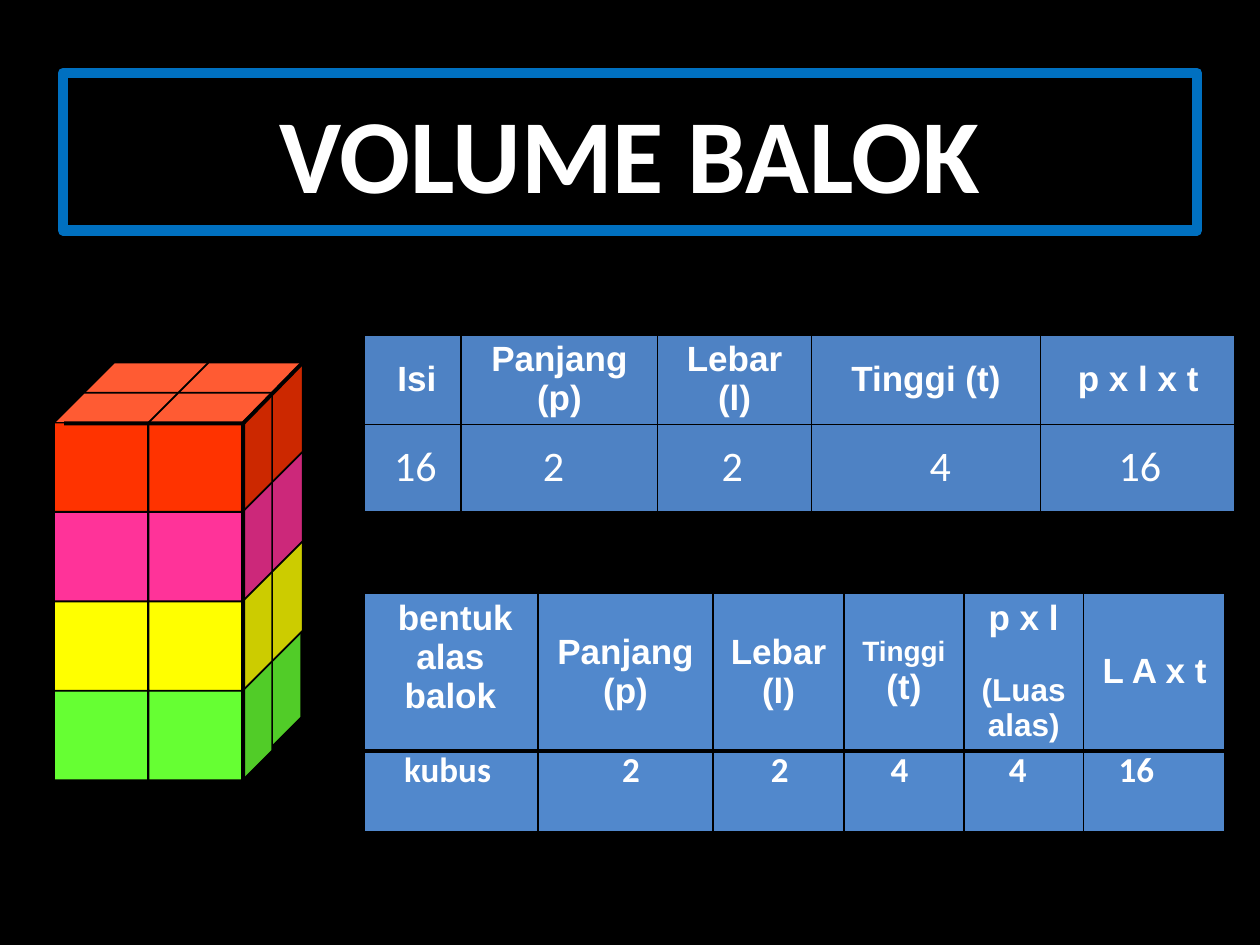
import pptx
import pptx.util
import pptx.dml.color
import pptx.enum.shapes
import pptx.enum.text
import pptx.oxml
import pptx.oxml.ns

Inches = pptx.util.Inches
Pt = pptx.util.Pt
SHAPE = pptx.enum.shapes.MSO_SHAPE
ALIGN = pptx.enum.text.PP_ALIGN
ANCHOR = pptx.enum.text.MSO_ANCHOR

COLOURS = {
    "black": "000000", "white": "FFFFFF", "frame": "0070C0", "cell": "558ED5",
    "green": "66FF33", "yellow": "FFFF00", "pink": "FF3399", "red": "FF3300",
}
LAYERS = ["green", "yellow", "pink", "red"]  # bottom to top
CUBE_WIDTH, CUBE_HEIGHT = 0.98, 0.94
COLUMN_STEP, LAYER_STEP, DEPTH = 0.75, 0.71, 0.24


def rgb(name):
    return pptx.dml.color.RGBColor.from_string(COLOURS[name])


def drawing_xml(body):
    tag, rest = body.split(" ", 1)
    return pptx.oxml.parse_xml(f"<{tag} {pptx.oxml.ns.nsdecls('a')} {rest}")


def write(para, text, size=20, font="Arial", bold=True, align=ALIGN.CENTER, before=0):
    span = para.add_run()
    span.text = text
    span.font.size = Pt(size)
    span.font.name = font
    span.font.bold = bold
    span.font.color.rgb = rgb("white")
    para.alignment = align
    para.space_before = Pt(before)


def add_label(page, text, left, top, width, height, **style):
    box = page.shapes.add_textbox(Inches(left), Inches(top), Inches(width), Inches(height))
    box.text_frame.word_wrap = True
    write(box.text_frame.paragraphs[0], text, font="Calibri", align=ALIGN.LEFT, **style)


def style_line(shape, colour, width):
    shape.line.color.rgb = rgb(colour)
    shape.line.width = Pt(width)


def add_cube(page, left, top, width, height, fill=None, line=0.75):
    cube = page.shapes.add_shape(
        SHAPE.CUBE, Inches(left), Inches(top), Inches(width), Inches(height))
    cube.shadow.inherit = False
    if fill:
        cube.fill.solid()
        cube.fill.fore_color.rgb = rgb(fill)
    else:
        cube.fill.background()
    style_line(cube, "black", line)


def add_stack(page):
    for level, colour in enumerate(LAYERS):
        for is_front in (False, True):
            shift = 0 if is_front else DEPTH
            for column in range(2):
                add_cube(page, 0.43 + shift + column * COLUMN_STEP,
                         5.25 - shift - level * LAYER_STEP,
                         CUBE_WIDTH, CUBE_HEIGHT, fill=colour)
            if level == 0 and not is_front:
                add_cube(page, 0.43, 2.88, 1.97, 3.31, line=2.25)

    # Thick edges of the front corner
    builder = page.shapes.build_freeform(Inches(2.4), Inches(2.88), scale=1.0)
    corner = [(1.93, 3.36), (1.93, 6.19), (1.93, 3.36), (0.51, 3.36)]
    builder.add_line_segments([(Inches(x), Inches(y)) for x, y in corner], close=False)
    edges = builder.convert_to_shape()
    edges.shadow.inherit = False
    edges.fill.background()
    style_line(edges, "black", 2.25)


def style_cell(cell, opacity, widths):
    cell.fill.solid()
    cell.fill.fore_color.rgb = rgb("cell")
    properties = cell._tc.get_or_add_tcPr()
    colour = properties.find(".//" + pptx.oxml.ns.qn("a:srgbClr"))
    colour.append(drawing_xml(f'a:alpha val="{opacity * 1000}"/>'))
    for place, (side, width) in enumerate(widths.items()):
        properties.insert(place, drawing_xml(
            f'a:ln{side} w="{Pt(width)}"><a:solidFill><a:srgbClr val="{COLOURS["black"]}"/>'
            f'</a:solidFill></a:ln{side}>'))


def add_grid(page, left, top, columns, rows, headers, opacity, divider):
    """Each header is a list of paragraphs, each a list of (text, format) spans."""
    frame = page.shapes.add_table(len(rows), len(columns), Inches(left), Inches(top),
                                  Inches(sum(columns)), Inches(sum(rows)))
    table = frame.table
    for column, width in zip(table.columns, columns):
        column.width = Inches(width)
    for row, height in zip(table.rows, rows):
        row.height = Inches(height)
    last = len(columns) - 1
    for r in range(len(rows)):
        for c in range(len(columns)):
            style_cell(table.cell(r, c), opacity, {
                "L": 2.25 if c == 0 else 1,
                "R": 2.25 if c == last else 1,
                "T": 2.25 if r == 0 else divider,
                "B": divider if r == 0 else 2.25,
            })
    for c, (anchor, paragraphs) in enumerate(headers):
        cell = table.cell(0, c)
        cell.vertical_anchor = anchor
        for number, spans in enumerate(paragraphs):
            text = cell.text_frame
            para = text.add_paragraph() if number else text.paragraphs[0]
            for words, style in spans:
                write(para, words, **style)


def plain(text, anchor=ANCHOR.MIDDLE):
    return anchor, [[(text, {})]]


def add_title(page, text):
    title = page.shapes.title
    title.left, title.top = Inches(0.5), Inches(0.58)
    title.width, title.height = Inches(9), Inches(1.25)
    style_line(title, "frame", 6)
    title.line._get_or_add_ln().append(drawing_xml("a:round />"))
    title.text_frame.auto_size = pptx.enum.text.MSO_AUTO_SIZE.NONE
    title.text_frame.vertical_anchor = ANCHOR.MIDDLE
    write(title.text_frame.paragraphs[0], text, size=60, font="Calibri")


def main():
    deck = pptx.Presentation()
    deck.slide_width, deck.slide_height = Inches(10), Inches(7.5)
    page = deck.slides.add_slide(deck.slide_layouts[5])
    page.background.fill.solid()
    page.background.fill.fore_color.rgb = rgb("black")

    add_title(page, "VOLUME BALOK")

    # Volume by length, width and height
    add_grid(page, 2.88, 2.65, [0.78, 1.56, 1.22, 1.82, 1.55], [0.71, 0.7],
             [plain(text) for text in
              (" Isi", "Panjang (p)", "Lebar (l)", "Tinggi (t)", "p x l x t")],
             opacity=92, divider=1)

    # Volume by base area and height
    add_grid(page, 2.88, 4.7, [1.39, 1.39, 1.04, 0.95, 0.95, 1.13], [1.26, 0.65], [
        plain(" bentuk alas balok", ANCHOR.TOP),
        plain("Panjang (p)"),
        plain("Lebar (l)"),
        (ANCHOR.MIDDLE, [[("Tinggi ", {"size": 16}), ("(t)", {})]]),
        (ANCHOR.TOP, [[("p x l", {})], [("(Luas alas)", {"size": 18, "before": 20})]]),
        plain("L A x t"),
    ], opacity=96, divider=2.25)

    # Stacked unit cubes
    add_stack(page)

    # Values over the second rows
    for text, left in [("16", 3.03), ("2", 4.21), ("2", 5.63), ("4", 7.28), ("16", 8.78)]:
        add_label(page, text, left, 3.44, 0.63, 0.5, size=24, bold=False)
    for text, left, width in [("kubus", 3.11, 1.18), ("2", 4.84, 0.4), ("2", 6.02, 0.47),
                              ("4", 6.97, 0.47), ("4", 7.91, 0.47), ("16", 8.78, 0.55)]:
        add_label(page, text, left, 5.88, width, 0.43)

    deck.save("out.pptx")


if __name__ == "__main__":
    main()
